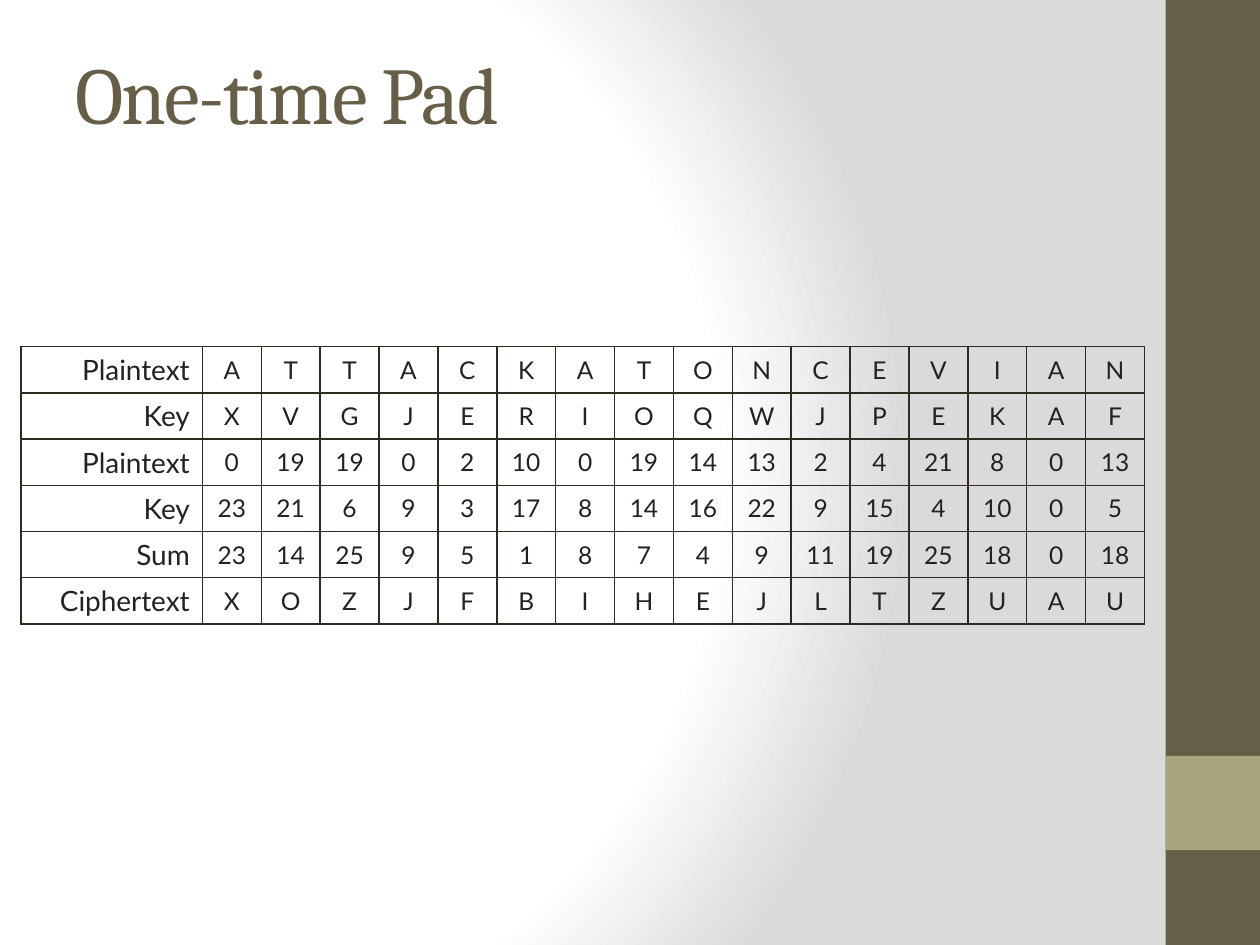
from pptx import Presentation
from pptx.dml.color import RGBColor as Rgb
from pptx.enum.shapes import MSO_SHAPE as Kind
from pptx.enum.text import MSO_ANCHOR as Anchor, PP_ALIGN as Align
from pptx.oxml import parse_xml
from pptx.oxml.ns import nsdecls
from pptx.util import Cm, Pt

HEX = {
    "bar": "675E47",
    "accent": "A9A57C",
    "title": "675E47",
    "text": "222222",
    "grid": "2F2B20",
    "light": "FFFFFF",
    "shade": "DADADA",
}

ROWS = [
    ("Plaintext", "A T T A C K A T O N C E V I A N"),
    ("Key", "X V G J E R I O Q W J P E K A F"),
    ("Plaintext", "0 19 19 0 2 10 0 19 14 13 2 4 21 8 0 13"),
    ("Key", "23 21 6 9 3 17 8 14 16 22 9 15 4 10 0 5"),
    ("Sum", "23 14 25 9 5 1 8 7 4 9 11 19 25 18 0 18"),
    ("Ciphertext", "X O Z J F B I H E J L T Z U A U"),
]


def set_back(slide):
    stops = [(0, "light"), (75, "light"), (100, "shade")]
    marks = "".join(
        f'<a:gs pos="{pos * 1000}"><a:srgbClr val="{HEX[name]}"/></a:gs>'
        for pos, name in stops)
    back = parse_xml(
        f'<p:bg {nsdecls("p", "a")}><p:bgPr><a:gradFill rotWithShape="1">'
        f'<a:gsLst>{marks}</a:gsLst><a:path path="circle">'
        '<a:fillToRect l="20000" t="50000" r="100000" b="50000"/></a:path>'
        '</a:gradFill><a:effectLst/></p:bgPr></p:bg>')
    slide.element.cSld.insert(0, back)


def add_bar(slide, top, high, color):
    bar = slide.shapes.add_shape(
        Kind.RECTANGLE, Cm(23.5), Cm(top), Cm(1.9), Cm(high))
    bar.shadow.inherit = False
    bar.fill.solid()
    bar.fill.fore_color.rgb = Rgb.from_string(HEX[color])
    bar.line.fill.background()


def set_font(para, name, size, color):
    para.font.name = name
    para.font.size = Pt(size)
    para.font.color.rgb = Rgb.from_string(HEX[color])


def add_title(slide, text):
    box = slide.shapes.add_textbox(Cm(1.27), Cm(0.76), Cm(21.16), Cm(3.18))
    box.text_frame.word_wrap = True
    para = box.text_frame.paragraphs[0]
    run = para.add_run()
    run.text = text
    set_font(para, "Cambria", 46, "title")
    run.font._element.set("spc", "-100")


def add_edges(cell):
    props = cell._tc.get_or_add_tcPr()
    for i, side in enumerate(("lnL", "lnR", "lnT", "lnB")):
        props.insert(i, parse_xml(
            f'<a:{side} {nsdecls("a")} w="12700"><a:solidFill>'
            f'<a:srgbClr val="{HEX["grid"]}"/></a:solidFill></a:{side}>'))


def fill_cell(cell, text, size, align):
    cell.fill.background()
    add_edges(cell)
    cell.vertical_anchor = Anchor.MIDDLE
    para = cell.text_frame.paragraphs[0]
    para.text = text
    para.alignment = align
    set_font(para, "Lato", size, "text")
    # Hanging indent
    props = para._p.get_or_add_pPr()
    props.set("marL", str(Cm(0.95)))
    props.set("indent", str(-Cm(0.95)))


def add_grid(slide, rows):
    wide, first, high = Cm(22.66), Cm(3.66), Cm(5.59)
    count = len(rows[0][1].split())
    table = slide.shapes.add_table(
        len(rows), count + 1, Cm(0.42), Cm(6.99), wide, high).table
    table.first_row = table.horz_banding = False
    for i, col in enumerate(table.columns):
        col.width = (wide - first) // count if i else first
    for r, (label, marks) in enumerate(rows):
        fill_cell(table.cell(r, 0), label, 16, Align.RIGHT)
        for c, mark in enumerate(marks.split(), 1):
            fill_cell(table.cell(r, c), mark, 14, Align.CENTER)


def main():
    deck = Presentation()
    deck.slide_width, deck.slide_height = Cm(25.4), Cm(19.05)
    slide = deck.slides.add_slide(deck.slide_layouts[6])

    # Background and side bars
    set_back(slide)
    add_bar(slide, 0, 19.05, "bar")
    add_bar(slide, 15.24, 1.9, "accent")

    # Cipher table and title
    add_grid(slide, ROWS)
    add_title(slide, "One-time Pad")

    deck.save("out.pptx")


if __name__ == "__main__":
    main()
